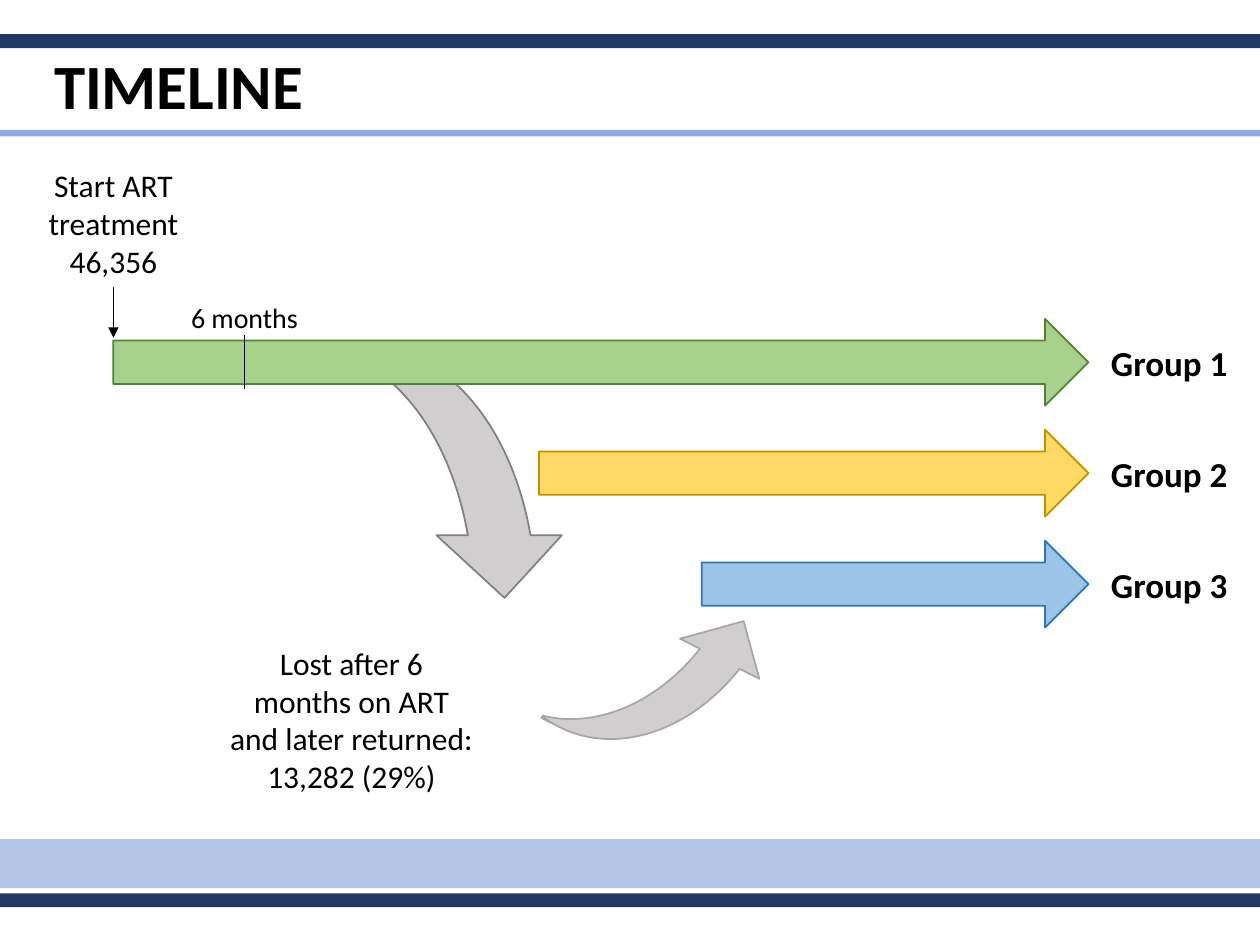
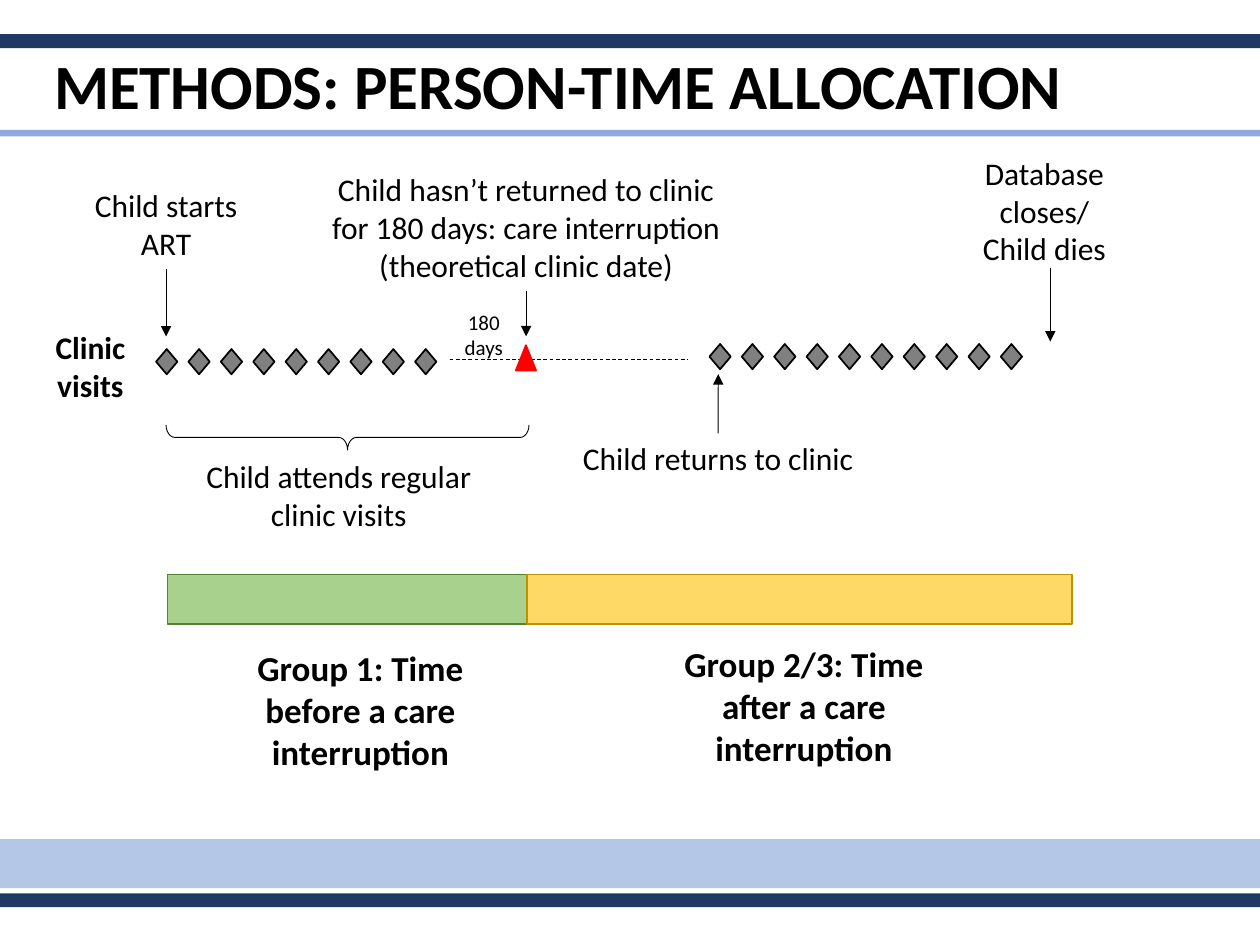
from lxml import etree
from pptx import Presentation
from pptx import util as u
from pptx.dml import color
from pptx.enum import dml, shapes, text
from pptx.oxml import ns

FONT = "Calibri"
BLACK, WHITE, RED = "000000", "FFFFFF", "FF0000"
NAVY, BLUE, PALE_BLUE = "203864", "8FAADC", "B4C7E7"
GREEN, GOLD, SKY = ("A9D18E", "548235"), ("FFD966", "BF9000"), ("9DC3E6", "2E75B6")
GREY, MID_GREY, LIGHT_GREY = "808080", "A6A6A6", "D0CECE"
PAGE_WIDTH, PAGE_HEIGHT = 720, 540
BANDS = [(479.5, 28, PALE_BLUE), (510.5, 8, NAVY), (19.5, 8, NAVY), (74.2, 3.8, BLUE)]

KIND = shapes.MSO_SHAPE
TOP, BOTTOM = 0, 2


def rgb(value):
    return color.RGBColor.from_string(value)


def add_part(page, kind, box, fill=None, line=None, weight=1, turn=0, flip=False):
    part = page.shapes.add_shape(kind, *map(u.Pt, box))
    part.shadow.inherit = False
    part.rotation = turn
    if flip:
        part._element.spPr.xfrm.set("flipV", "1")
    if fill:
        part.fill.solid()
        part.fill.fore_color.rgb = rgb(fill)
    else:
        part.fill.background()
    if line:
        part.line.color.rgb = rgb(line)
        part.line.width = u.Pt(weight)
    else:
        part.line.fill.background()
    return part


def add_text(page, box, words, size=18, bold=False, centred=True, middle=False, wrap=True):
    label = page.shapes.add_textbox(*map(u.Pt, box))
    frame = label.text_frame
    frame.text = words
    frame.word_wrap = wrap
    frame.vertical_anchor = text.MSO_ANCHOR.MIDDLE if middle else text.MSO_ANCHOR.TOP
    for para in frame.paragraphs:
        para.alignment = text.PP_ALIGN.CENTER if centred else text.PP_ALIGN.LEFT
        for span in para.runs:
            span.font.name = FONT
            span.font.size = u.Pt(size)
            span.font.bold = bold
            span.font.color.rgb = rgb(BLACK)
    return label


def add_line(page, start, end, arrow=False, dashed=False):
    line = page.shapes.add_connector(shapes.MSO_CONNECTOR.STRAIGHT, *map(u.Pt, start + end))
    line.line.color.rgb = rgb(BLACK)
    line.line.width = u.Pt(0.5)
    if dashed:
        line.line.dash_style = dml.MSO_LINE.DASH
    if arrow:
        outline = line.line._get_or_add_ln()
        etree.SubElement(outline, ns.qn("a:tailEnd"), type="triangle")
    etree.SubElement(line._element.spPr, ns.qn("a:effectLst"))
    return line


def add_callout(page, box, words, tip):
    """Centred text with an arrow from the side facing the tip."""
    left, top, width, height = box
    label = add_text(page, box, words)
    below = tip > top
    edge = top + height if below else top
    middle = left + width / 2
    arrow = add_line(page, (middle, edge), (middle, tip), arrow=True)
    arrow.begin_connect(label, BOTTOM if below else TOP)


def add_page(deck, title):
    page = deck.slides.add_slide(deck.slide_layouts[6])
    for top, height, fill in BANDS:
        add_part(page, KIND.RECTANGLE, (0, top, PAGE_WIDTH, height), fill)
    heading = add_text(page, (23.8, 29.5, 678, 42.5), title, 36, True, False, True)
    heading.text_frame.paragraphs[0].line_spacing = 0.9
    return page


# Timeline slide
def add_curved_arrows(page, left, top):
    """Loss and return arrows; white covers hide the unused half of each curve."""
    arrow, cover = KIND.CURVED_LEFT_ARROW, KIND.RECTANGLE
    add_part(page, arrow, (left + 208.5, top + 121.5, 101.5, 196.5),
             LIGHT_GREY, MID_GREY, turn=116.8, flip=True)
    add_part(page, cover, (left + 180.5, top + 58.8, 93.6, 213),
             WHITE, WHITE, turn=26.8, flip=True)
    add_part(page, arrow, (left + 52.3, top, 143.3, 244.8), LIGHT_GREY, GREY, turn=270)
    add_part(page, cover, (left, top + 20, 116.6, 301), WHITE, WHITE)


def add_group_arrows(page, right, top):
    height, pitch = 49.6, 63.4
    groups = [(557.3, GREEN), (314, GOLD), (221, SKY)]
    for row, (length, colours) in enumerate(groups):
        row_top = top + row * pitch
        add_part(page, KIND.RIGHT_ARROW, (right - length, row_top, length, height), *colours)
        add_text(page, (right + 5.8, row_top + 9.2, 81.4, 31.5), f"Group {row + 1}",
                 20, True, False, wrap=False)


def add_six_month_mark(page, left, top):
    add_line(page, (left + 42.5, top + 25.2), (left + 42.5, top + 56.2))
    add_text(page, (left, top, 85, 30.2), "6 months", 16, middle=True)


def build_timeline(deck):
    page = add_page(deck, "TIMELINE")
    add_curved_arrows(page, 77.8, 147.6)
    add_group_arrows(page, 622, 182.2)
    add_callout(page, (5.8, 91.4, 118, 72.8), "Start ART treatment\n46,356", 193)
    add_six_month_mark(page, 97.2, 166.3)
    add_text(page, (123.1, 364.3, 155.5, 94.3),
             "Lost after 6 months on ART and later returned:\n13,282 (29%)")


# Person-time slide
def add_visits(page, left, top, count):
    width, height, pitch = 12.2, 14.4, 18.5
    for visit in range(count):
        add_part(page, KIND.DIAMOND, (left + visit * pitch, top, width, height), GREY, BLACK)


def add_regular_care(page, left, top):
    add_callout(page, (left - 53.3, top - 96.5, 118, 51), "Child starts ART", top - 7.2)
    add_text(page, (left - 70.6, top - 4.3, 66.2, 27.4), "Clinic visits",
             bold=True, middle=True)
    add_visits(page, left, top, 9)
    brace = add_part(page, KIND.RIGHT_BRACE, (left + 102.2, top - 53.2, 14.4, 207.4),
                     line=BLACK, weight=0.5, turn=90)
    brace.adjustments[0] = 0.354
    add_text(page, (left + 21.6, top + 58.3, 165.6, 51), "Child attends regular clinic visits")


def add_interruption(page, left, top):
    add_callout(page, (left, top, 251.3, 72.7),
                "Child hasn’t returned to clinic\vfor 180 days: care interruption\v"
                "(theoretical clinic date)", top + 98.6)
    add_line(page, (left + 82, top + 111.6), (left + 218.2, top + 111.6), dashed=True)
    add_text(page, (left + 82, top + 84.2, 38.9, 26.6), "180 days", 12, middle=True)
    add_part(page, KIND.ISOSCELES_TRIANGLE, (left + 119.8, top + 103.7, 11.5, 14.4), RED, RED)


def add_return_to_care(page, left, top):
    add_visits(page, left, top, 10)
    add_callout(page, (left - 95, top + 51, 200, 28.8), "Child returns to clinic", top + 17.2)
    add_text(page, (left + 141, top - 90, 100.8, 27.4), "Database closes/\vChild dies",
             middle=True)
    add_line(page, (left + 194.8, top - 43.2), (left + 194.8, top - 1.4), arrow=True)


def add_person_time(page, left, top):
    spans = [
        (0, 205.9, GREEN, 38.2, 37.4, 144, "Group 1: Time before a care interruption"),
        (205.2, 311.8, GOLD, 270.7, 35.4, 185.8, "Group 2/3: Time after a care interruption"),
    ]
    for start, length, colours, label_left, label_top, label_width, words in spans:
        add_part(page, KIND.RECTANGLE, (left + start, top, length, 28.2), *colours)
        add_text(page, (left + label_left, top + label_top, label_width, 80), words, 20, True)


def build_person_time(deck):
    page = add_page(deck, "METHODS: PERSON-TIME ALLOCATION")
    add_regular_care(page, 89.2, 199.5)
    add_return_to_care(page, 405.4, 196.6)
    add_person_time(page, 95.8, 328.3)
    add_interruption(page, 175, 93.6)


def main():
    deck = Presentation()
    deck.slide_width, deck.slide_height = u.Pt(PAGE_WIDTH), u.Pt(PAGE_HEIGHT)
    build_timeline(deck)
    build_person_time(deck)
    deck.save("out.pptx")


if __name__ == "__main__":
    main()
